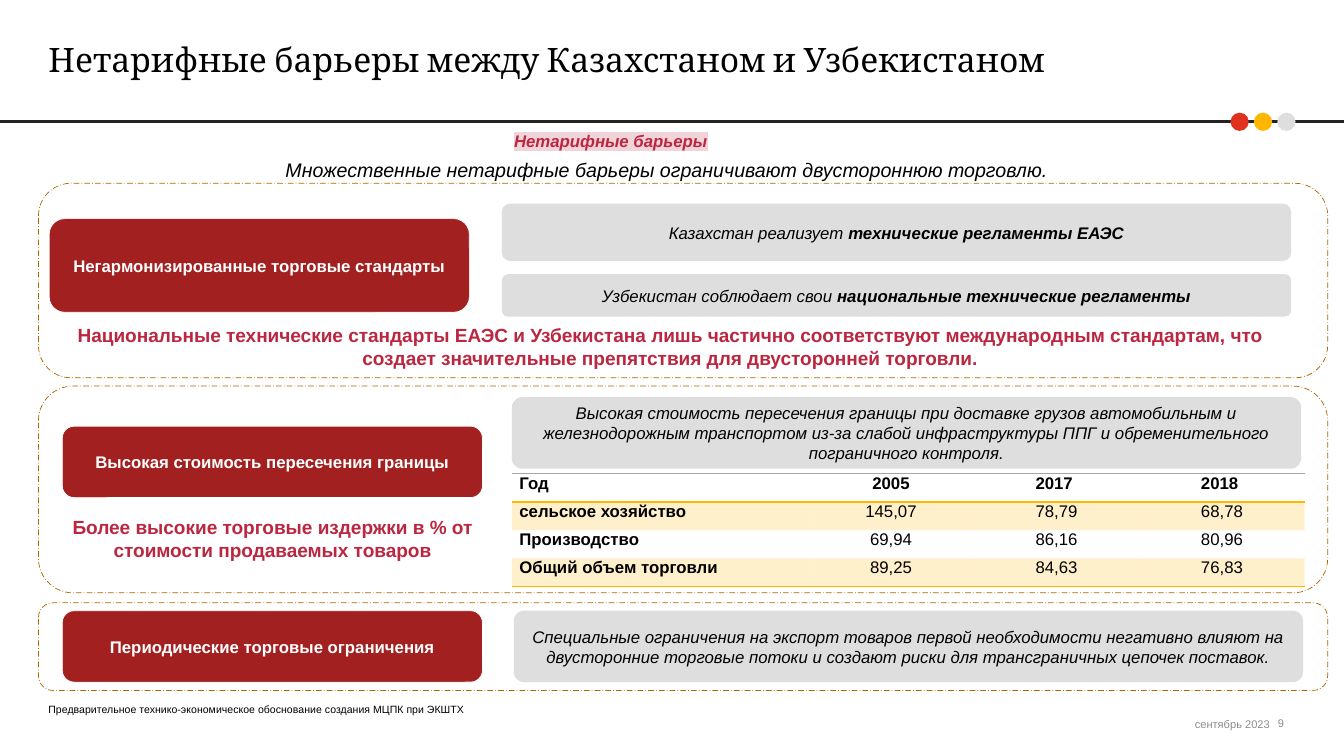
from lxml.etree import SubElement
from pptx import Presentation
from pptx.dml.color import RGBColor
from pptx.enum.dml import MSO_LINE
from pptx.enum.shapes import MSO_CONNECTOR, MSO_SHAPE
from pptx.enum.text import MSO_ANCHOR, PP_ALIGN
from pptx.oxml import parse_xml
from pptx.oxml.ns import nsdecls, qn
from pptx.util import Cm, Pt

INK, RED, ROSE, GOLD, GREY = "000000", "A32020", "BB2740", "FFB600", "DEDEDE"
MID, LEFT, RIGHT = PP_ALIGN.CENTER, PP_ALIGN.LEFT, PP_ALIGN.RIGHT
TOP, CORE, BASE = MSO_ANCHOR.TOP, MSO_ANCHOR.MIDDLE, MSO_ANCHOR.BOTTOM

DOTS = ["E0301E", GOLD, GREY]
FRAMES = [(4.62, 4.9), (9.73, 5.21), (15.19, 2.21)]
HEADS = [
    ((1.24, 5.51, 10.59, 2.36), "Негармонизированные торговые стандарты"),
    ((1.57, 10.74, 10.59, 1.8), "Высокая стоимость пересечения границы"),
    ((1.57, 15.39, 10.59, 1.8), "Периодические торговые ограничения"),
]
FACTS = [
    ((12.65, 5.13, 19.89, 1.45), "Казахстан реализует ", "технические регламенты ЕАЭС"),
    ((12.65, 6.91, 19.89, 1.07), "Узбекистан соблюдает свои ", "национальные технические регламенты"),
    ((12.9, 10.01, 19.89, 1.8), "Высокая стоимость пересечения границы при доставке грузов автомобильным и железнодорожным транспортом из-за слабой инфраструктуры ППГ и обременительного пограничного контроля.", ""),
    ((12.95, 15.39, 19.89, 1.8), "Специальные ограничения на экспорт товаров первой необходимости негативно влияют на двусторонние торговые потоки и создают риски для трансграничных цепочек поставок.", ""),
]
NOTES = [
    ((1.22, 0.97, 31.39, 1.02), "Нетарифные барьеры между Казахстаном и Узбекистаном",
     dict(size=24, face="Cambria", align=LEFT, anchor=CORE)),
    ((0.97, 3.99, 31.67, 1.8), "Множественные нетарифные барьеры ограничивают двустороннюю торговлю.",
     dict(size=14, slant=True)),
    ((3.33, 3.3, 24.13, 0.51), "Нетарифные барьеры",
     dict(color=ROSE, bold=True, slant=True, mark="F1D4D9")),
    ((1.22, 8.15, 31.32, 1.17), "Национальные технические стандарты ЕАЭС и Узбекистана лишь частично соответствуют международным стандартам, что создает значительные препятствия для двусторонней торговли.",
     dict(size=13.6, color=ROSE, bold=True)),
    ((1.57, 13, 10.59, 1.17), "Более высокие торговые издержки в % от стоимости продаваемых товаров",
     dict(size=13.6, color=ROSE, bold=True)),
    ((27.1, 18.03, 4.9, 0.38), "сентябрь 2023",
     dict(size=7.9, color="8C8C8C", align=RIGHT, anchor=BASE)),
    ((27.74, 18.03, 4.62, 0.38), "9",
     dict(size=7.9, color="8C8C8C", align=RIGHT, anchor=CORE)),
    ((1.22, 17.65, 15.21, 0.38), "Предварительное технико-экономическое обоснование создания МЦПК при ЭКШТХ",
     dict(size=7.5, align=LEFT, anchor=BASE)),
]
COSTS = [
    ("Год", "2005", "2017 ", "2018 "),
    ("сельское хозяйство", "145,07", "78,79", "68,78"),
    ("Производство", "69,94", "86,16", "80,96"),
    ("Общий объем торговли", "89,25", "84,63", "76,83"),
]
EDGES = [("A6A6A6", 0.75), (GOLD, 1), None, None, (GOLD, 1)]
COLS = [7.47, 4.17, 4.17, 4.17]
ROW = 0.71

deck = Presentation()
deck.slide_width, deck.slide_height = Cm(33.87), Cm(19.05)
slide = deck.slides.add_slide(deck.slide_layouts[6])
shapes = slide.shapes


def paint(part, color):
    if hasattr(part, "solid"):
        part.solid()
        part = part.fore_color
    part.rgb = RGBColor.from_string(color)


def write(frame, text, tail="", size=12, face="Arial", color=INK, bold=False,
          slant=False, mark=None, align=MID, anchor=TOP):
    frame.word_wrap = True
    frame.vertical_anchor = anchor
    para = frame.paragraphs[0]
    para.alignment = align
    for part, heavy in ((text, bold), (tail, True)):
        if not part:
            continue
        run = para.add_run()
        run.text = part
        font = run.font
        font.size, font.name, font.bold, font.italic = Pt(size), face, heavy, slant
        paint(font.color, color)
        if mark:
            fill = run._r.rPr.find(qn("a:solidFill"))
            fill.addnext(parse_xml(
                f'<a:highlight {nsdecls("a")}><a:srgbClr val="{mark}"/></a:highlight>'))


def block(kind, box, fill, line=None, dash=None):
    shape = shapes.add_shape(kind, *map(Cm, box))
    shape.shadow.inherit = False
    paint(shape.fill, fill)
    if line:
        paint(shape.line.fill, line)
        shape.line.width = Pt(0.5)
        shape.line.dash_style = dash
    else:
        shape.line.fill.background()
    return shape


def edge(cell, side, style):
    line = SubElement(cell._tc.get_or_add_tcPr(), qn("a:ln" + side))
    if style:
        color, width = style
        line.set("w", str(Pt(width)))
        fill = SubElement(line, qn("a:solidFill"))
        SubElement(fill, qn("a:srgbClr")).set("val", color)
    else:
        SubElement(line, qn("a:noFill"))


rule = shapes.add_connector(MSO_CONNECTOR.STRAIGHT, 0, Cm(3.07), deck.slide_width, Cm(3.07))
paint(rule.line.fill, "232323")
rule.line.width = Pt(2)
SubElement(rule._element.spPr, qn("a:effectLst"))

for i, color in enumerate(DOTS):
    block(MSO_SHAPE.OVAL, (31.01 + 0.59 * i, 2.84, 0.46, 0.46), color)

for top, high in FRAMES:
    block(MSO_SHAPE.ROUNDED_RECTANGLE, (0.97, top, 32.49, high), "FFFFFF",
          "AE6800", MSO_LINE.LONG_DASH_DOT)

for box, text in HEADS:
    shape = block(MSO_SHAPE.ROUNDED_RECTANGLE, box, RED, "FFFFFF")
    write(shape.text_frame, text, color="FFFFFF", bold=True, anchor=CORE)

for box, text, tail in FACTS:
    shape = block(MSO_SHAPE.ROUNDED_RECTANGLE, box, GREY)
    shape.adjustments[0] = 0.145
    write(shape.text_frame, text, tail, slant=True, anchor=CORE)

for box, text, style in NOTES:
    frame = shapes.add_textbox(*map(Cm, box)).text_frame
    frame.margin_left = frame.margin_right = frame.margin_top = frame.margin_bottom = 0
    write(frame, text, **style)

table = shapes.add_table(len(COSTS), len(COLS), Cm(12.9), Cm(11.94),
                         Cm(sum(COLS)), Cm(ROW * len(COSTS))).table
table.first_row = table.horz_banding = False
for col, wide in zip(table.columns, COLS):
    col.width = Cm(wide)
for r, line in enumerate(COSTS):
    table.rows[r].height = Cm(ROW)
    for c, text in enumerate(line):
        cell = table.cell(r, c)
        cell.margin_left = cell.margin_right = Cm(0.19)
        cell.margin_top = cell.margin_bottom = 0
        for side, style in zip("LRTB", (None, None, EDGES[r], EDGES[r + 1])):
            edge(cell, side, style)
        if r % 2:
            paint(cell.fill, GOLD)
            tint = cell._tc.tcPr.find(".//" + qn("a:solidFill") + "[last()]")
            tint = cell._tc.tcPr.findall(qn("a:solidFill"))[0]
            SubElement(tint[0], qn("a:alpha")).set("val", "20000")
        else:
            cell.fill.background()
        write(cell.text_frame, text, bold=r == 0 or c == 0,
              align=MID if c else PP_ALIGN.JUSTIFY)

deck.save("out.pptx")
